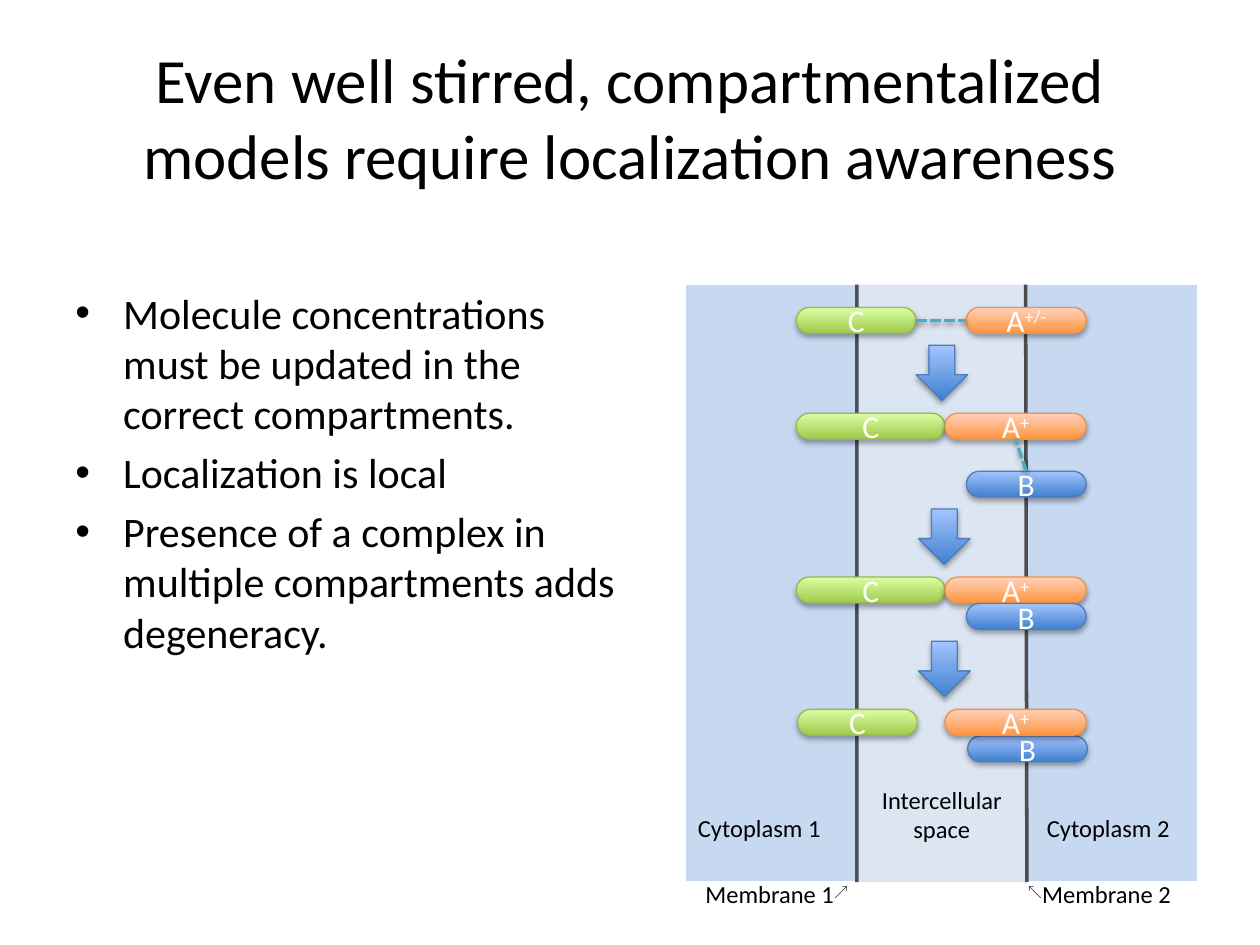
from lxml import etree
from pptx import Presentation
from pptx.dml.color import RGBColor
from pptx.enum.dml import MSO_LINE
from pptx.enum.shapes import MSO_CONNECTOR, MSO_SHAPE
from pptx.enum.text import MSO_ANCHOR, MSO_AUTO_SIZE, PP_ALIGN
from pptx.oxml.ns import qn
from pptx.util import Inches, Pt

RECTANGLE, PILL, DOWN_ARROW = MSO_SHAPE.RECTANGLE, MSO_SHAPE.ROUNDED_RECTANGLE, MSO_SHAPE.DOWN_ARROW
STRAIGHT, DASHED = MSO_CONNECTOR.STRAIGHT, MSO_LINE.SQUARE_DOT
LEFT, CENTER = PP_ALIGN.LEFT, PP_ALIGN.CENTER
TOP_ANCHOR, MIDDLE = MSO_ANCHOR.TOP, MSO_ANCHOR.MIDDLE
FIT_TEXT = MSO_AUTO_SIZE.SHAPE_TO_FIT_TEXT
TOP, LEFT_SIDE, BOTTOM, RIGHT_SIDE = range(4)

COLORS = {
    "text": "000000", "label": "FFFFFF", "border": "FFFFFF",
    "cytoplasm": "C6D9F1", "space": "DCE6F2", "membrane": "262626", "bond": "4BACC6",
}
# Bottom colour, top colour, outline
GRADIENTS = {
    "green": ("A0CA4A", "DAFFA5", "98B955"),
    "orange": ("FF953E", "FFD2BD", "F69240"),
    "blue": ("3F80CE", "A4C4FF", "4B7EBC"),
}


class SlideBuilder:
    """Draws on a grid of 100 columns by 75 rows."""

    font_name, symbol_font = "Calibri", "Arial"
    columns, rows = 100, 75

    def __init__(self, presentation):
        self.slide = presentation.slides.add_slide(presentation.slide_layouts[6])
        self.column = presentation.slide_width / self.columns
        self.row = presentation.slide_height / self.rows

    def place(self, left, top, *size):
        units = (self.column, self.row) * 2
        return [round(value * unit) for value, unit in zip((left, top, *size), units)]

    def color(self, name):
        return RGBColor.from_string(COLORS.get(name, name))

    def add_shadow(self, effects, distance, opacity):
        shadow = etree.SubElement(effects, qn("a:outerShdw"), blurRad="40000",
                                  dist=str(distance), dir="5400000", rotWithShape="0")
        color = etree.SubElement(shadow, qn("a:srgbClr"), val="000000")
        etree.SubElement(color, qn("a:alpha"), val=str(opacity * 1000))

    def add_runs(self, paragraph, runs, size, color, align):
        """Each run is plain text, or a (text, font) pair for a superscript."""
        paragraph.alignment = align
        paragraph.font.size = Pt(size)
        paragraph.font.color.rgb = self.color(color)
        paragraph.font.name = self.font_name
        for item in runs:
            text, font = (item, None) if isinstance(item, str) else item
            run = paragraph.add_run()
            run.text = text
            if font:
                run.font.name = font
                run.font._element.set("baseline", "30000")

    def text(self, box, paragraphs, size, align=LEFT, anchor=TOP_ANCHOR, wrap=True,
             fit=False, bullets=False):
        frame = self.slide.shapes.add_textbox(*self.place(*box)).text_frame
        frame.word_wrap = wrap
        frame.vertical_anchor = anchor
        if fit:
            frame.auto_size = FIT_TEXT
        for index, runs in enumerate(paragraphs):
            paragraph = frame.add_paragraph() if index else frame.paragraphs[0]
            if bullets:
                self.bullet(paragraph, size)
            self.add_runs(paragraph, runs, size, "text", align)

    def bullet(self, paragraph, size):
        paragraph.space_before = Pt(size * 0.2)
        properties = paragraph._p.get_or_add_pPr()
        indent = Inches(0.38)
        properties.set("marL", str(indent))
        properties.set("indent", str(-indent))
        etree.SubElement(properties, qn("a:buFont"), typeface=self.symbol_font)
        etree.SubElement(properties, qn("a:buChar"), char="•")

    def panel(self, box, fill, border=None):
        shape = self.slide.shapes.add_shape(RECTANGLE, *self.place(*box))
        shape.shadow.inherit = False
        shape.fill.solid()
        shape.fill.fore_color.rgb = self.color(fill)
        if border:
            shape.line.color.rgb = self.color(border)
            shape.line.width = Pt(0.75)
        else:
            shape.line.fill.background()

    def glossy(self, kind, box, gradient):
        shape = self.slide.shapes.add_shape(kind, *self.place(*box))
        bottom, top, outline = GRADIENTS[gradient]
        shape.fill.gradient()
        shape.fill.gradient_angle = 90
        for stop, color in zip(shape.fill.gradient_stops, (bottom, top)):
            stop.color.rgb = self.color(color)
        shape.line.color.rgb = self.color(outline)
        shape.line.width = Pt(0.75)
        shape.shadow.inherit = False
        self.add_shadow(shape._element.spPr.find(qn("a:effectLst")), 23000, 35)
        return shape

    def molecule(self, left, top, width, gradient, runs):
        shape = self.glossy(PILL, (left, top, width, 2.05), gradient)
        shape.adjustments[0] = 0.5
        shape.text_frame.vertical_anchor = MIDDLE
        self.add_runs(shape.text_frame.paragraphs[0], runs, 18, "label", CENTER)
        return shape

    def line(self, start, end, color):
        connector = self.slide.shapes.add_connector(
            STRAIGHT, *self.place(*start), *self.place(*end))
        connector.line.color.rgb = self.color(color)
        connector.line.width = Pt(2)
        effects = etree.SubElement(connector._element.spPr, qn("a:effectLst"))
        return connector, effects

    def membrane(self, start, end):
        connector, _ = self.line(start, end, "membrane")
        color = connector._element.spPr.find(".//" + qn("a:srgbClr"))
        etree.SubElement(color, qn("a:alpha"), val="80000")

    def bond(self, first, first_side, second, second_side):
        connector, effects = self.line((0, 0), (0, 0), "bond")
        connector.line.dash_style = DASHED
        connector.begin_connect(first, first_side)
        connector.end_connect(second, second_side)
        self.add_shadow(effects, 20000, 38)


def main():
    presentation = Presentation()
    presentation.slide_width, presentation.slide_height = Inches(10), Inches(7.5)
    builder = SlideBuilder(presentation)
    calibri, arial = builder.font_name, builder.symbol_font

    # Title and bullets
    builder.text((5, 3, 90, 12.5),
                 [["Even well stirred, compartmentalized models require localization awareness"]],
                 36, CENTER, MIDDLE)
    builder.text((5, 22.3, 46.3, 44.7), [
        ["Molecule concentrations must be updated in the correct compartments."],
        ["Localization is local"],
        ["Presence of a complex in multiple compartments adds degeneracy."],
    ], 24, bullets=True)

    # Compartments and the membranes between them
    left, top, width, height = 54.4, 22.6, 13.55, 47.4
    for index, (fill, border) in enumerate(
            [("cytoplasm", "border"), ("space", None), ("cytoplasm", "border")]):
        builder.panel((left + index * width, top, width, height), fill, border)
    for start, end in ((68, 68), (81.4, 81.5)):
        builder.membrane((start, top), (end, top + height))

    # Molecules in four stages
    short, medium, long = 9.5, 11.2, 11.8
    c_left, a_left, b_left = 63.2, 75, 76.7
    charged = ["A", ("+", calibri)]
    stages = [24.4, 32.8, 45.8, 56.3]

    free_c = builder.molecule(c_left, stages[0], short, "green", ["C"])
    free_a = builder.molecule(b_left, stages[0], short, "orange", ["A", ("+/-", calibri)])
    builder.bond(free_c, RIGHT_SIDE, free_a, LEFT_SIDE)

    for stage, b_offset in ((stages[1], 4.6), (stages[2], 2.1)):
        builder.molecule(c_left, stage, long, "green", ["C"])
        bound_a = builder.molecule(a_left, stage, medium, "orange", charged)
        bound_b = builder.molecule(b_left, stage + b_offset, short, "blue", ["B"])
        if stage == stages[1]:
            builder.bond(bound_b, TOP, bound_a, BOTTOM)

    builder.molecule(c_left + 0.1, stages[3], short, "green", ["C"])
    builder.molecule(b_left + 0.1, stages[3] + 2.1, short, "blue", ["B"])
    builder.molecule(a_left, stages[3], medium, "orange", charged)

    # Arrow above each later stage
    for stage, arrow_left in zip(stages[1:], (72.7, 72.9, 72.9)):
        builder.glossy(DOWN_ARROW, (arrow_left, stage - 5.4, 4.1, 4.4), "blue")

    # Compartment and membrane labels
    builder.text((68, 61.8, 13.5, 5.7), [["Intercellular space"]], 14, CENTER, fit=True)
    for box, runs in (
        ((54.4, 64, 12.9, 3.4), ["Cytoplasm 1"]),
        ((82.1, 64, 12.9, 3.4), ["Cytoplasm 2"]),
        ((55, 69.3, 14.2, 3.4), ["Membrane 1", ("↗", arial)]),
        ((80.6, 69.3, 14.2, 3.4), [("↖", arial), "Membrane 2"]),
    ):
        builder.text(box, [runs], 14, wrap=False, fit=True)

    presentation.save("out.pptx")


if __name__ == "__main__":
    main()
